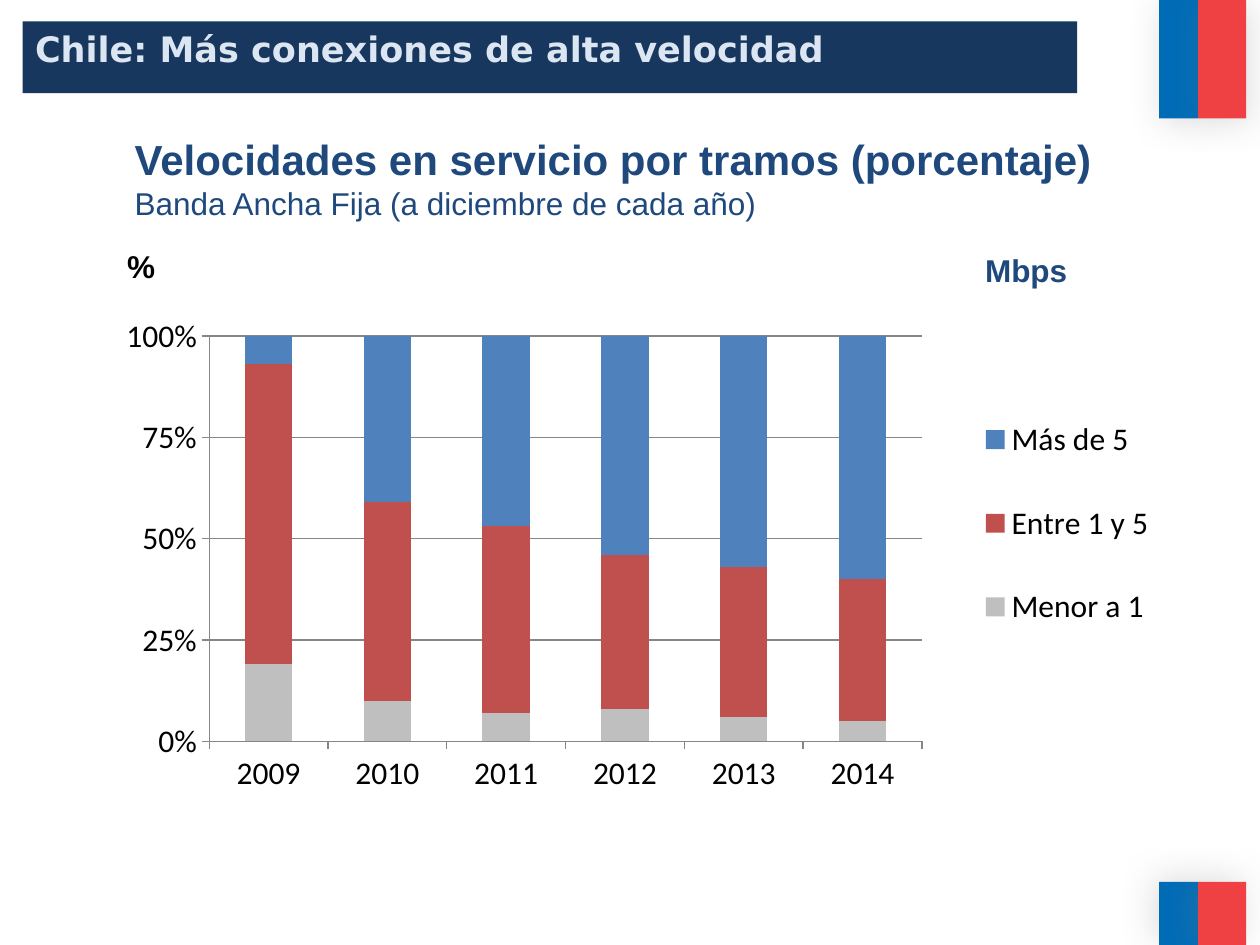
from dataclasses import dataclass

from lxml import etree
from pptx import Presentation
from pptx.chart.chart import Chart
from pptx.chart.data import CategoryChartData
from pptx.dml.color import RGBColor
from pptx.enum.chart import XL_CHART_TYPE, XL_LEGEND_POSITION, XL_TICK_MARK
from pptx.enum.text import MSO_ANCHOR, MSO_AUTO_SIZE, PP_ALIGN
from pptx.oxml import parse_xml
from pptx.oxml.ns import nsdecls, qn
from pptx.shapes.autoshape import Shape
from pptx.slide import Slide
from pptx.text.text import TextFrame
from pptx.util import Inches, Pt
from pptx.enum.shapes import MSO_SHAPE

RECTANGLE = MSO_SHAPE.RECTANGLE
STACKED_100 = XL_CHART_TYPE.COLUMN_STACKED_100
LEGEND_RIGHT = XL_LEGEND_POSITION.RIGHT
TICK_OUTSIDE = XL_TICK_MARK.OUTSIDE
ANCHOR_TOP = MSO_ANCHOR.TOP
GROW = MSO_AUTO_SIZE.SHAPE_TO_FIT_TEXT
ALIGN_LEFT = PP_ALIGN.LEFT

BLACK = RGBColor(0x00, 0x00, 0x00)
FLAG_BLUE = RGBColor(0x00, 0x6C, 0xB7)
FLAG_RED = RGBColor(0xEF, 0x41, 0x44)
NAVY = RGBColor(0x17, 0x37, 0x5E)
PALE_BLUE = RGBColor(0xDC, 0xE6, 0xF2)
HEADING_BLUE = RGBColor(0x1F, 0x49, 0x7D)
LINE_GREY = RGBColor(0x86, 0x86, 0x86)
BAR_GREY = RGBColor(0xBF, 0xBF, 0xBF)
BAR_RED = RGBColor(0xC0, 0x50, 0x4D)
BAR_BLUE = RGBColor(0x4F, 0x81, 0xBD)


@dataclass(frozen=True)
class Area:
    left: float
    top: float
    width: float
    height: float

    def lengths(self) -> list[Inches]:
        return [Inches(n) for n in (self.left, self.top, self.width, self.height)]


@dataclass(frozen=True)
class Block:
    area: Area
    color: RGBColor
    shadow_angle: int


@dataclass(frozen=True)
class Line:
    text: str
    size: int
    color: RGBColor
    bold: bool = True
    font: str = "Arial"


@dataclass(frozen=True)
class Label:
    area: Area
    lines: tuple[Line, ...]


@dataclass(frozen=True)
class SpeedBand:
    name: str
    values: tuple[int, ...]
    color: RGBColor


FLAG_BLOCKS = (
    Block(Area(9.2, -0.01, 0.31, 0.95), FLAG_BLUE, 45),
    Block(Area(9.51, 0, 0.38, 0.94), FLAG_RED, 45),
    Block(Area(9.2, 7, 0.31, 0.5), FLAG_BLUE, 215),
    Block(Area(9.51, 7, 0.38, 0.5), FLAG_RED, 215),
)
BANNER_AREA = Area(0.18, 0.17, 8.37, 0.57)
BANNER_LINE = Line("Chile: Más conexiones de alta velocidad", 20, PALE_BLUE, font="DejaVu Sans")
LABELS = (
    Label(Area(7.72, 1.94, 0.86, 0.4), (Line("Mbps", 18, HEADING_BLUE),)),
    Label(Area(0.97, 1.01, 8.15, 0.81), (
        Line("Velocidades en servicio por tramos (porcentaje)", 24, HEADING_BLUE),
        Line("Banda Ancha Fija (a diciembre de cada año)", 18, HEADING_BLUE, bold=False),
    )),
    Label(Area(0.91, 1.91, 0.39, 0.4), (Line("%", 18, BLACK),)),
)
CHART_AREA = Area(0.78, 2, 9.08, 4.44)
PLOT_LAYOUT = Area(0.097, 0.15, 0.623, 0.725)
LEGEND_LAYOUT = Area(0.74, 0.22, 0.22, 0.53)
YEARS = [str(year) for year in range(2009, 2015)]
SPEED_BANDS = (
    SpeedBand("Menor a 1 ", (19, 10, 7, 8, 6, 5), BAR_GREY),
    SpeedBand("Entre 1 y 5 ", (74, 49, 46, 38, 37, 35), BAR_RED),
    SpeedBand("Más de 5 ", (7, 41, 47, 54, 57, 60), BAR_BLUE),
)


def add_rectangle(page: Slide, area: Area, color: RGBColor) -> Shape:
    box = page.shapes.add_shape(RECTANGLE, *area.lengths())
    box.shadow.inherit = False
    box.fill.solid()
    box.fill.fore_color.rgb = color
    box.line.fill.background()
    return box


def add_flag_block(page: Slide, block: Block) -> None:
    box = add_rectangle(page, block.area, block.color)
    effects = box._element.spPr.find(qn("a:effectLst"))
    effects.append(parse_xml(
        f'<a:outerShdw {nsdecls("a")} blurRad="{Pt(20)}" dist="{Pt(3)}" '
        f'dir="{block.shadow_angle * 60000}" algn="ctr" rotWithShape="0">'
        '<a:srgbClr val="808080"><a:alpha val="25000"/></a:srgbClr></a:outerShdw>'
    ))


def write_lines(frame: TextFrame, lines: tuple[Line, ...]) -> None:
    for index, line in enumerate(lines):
        para = frame.add_paragraph() if index else frame.paragraphs[0]
        para.text = line.text
        para.alignment = ALIGN_LEFT
        para.font.name = line.font
        para.font.size = Pt(line.size)
        para.font.bold = line.bold
        para.font.color.rgb = line.color


def add_banner(page: Slide) -> None:
    banner = add_rectangle(page, BANNER_AREA, NAVY)
    banner.text_frame.vertical_anchor = ANCHOR_TOP
    write_lines(banner.text_frame, (BANNER_LINE,))


def add_label(page: Slide, label: Label) -> None:
    frame = page.shapes.add_textbox(*label.area.lengths()).text_frame
    frame.word_wrap = False
    frame.auto_size = GROW
    write_lines(frame, label.lines)


def make_layout(area: Area, inner: bool) -> etree._Element:
    target = '<c:layoutTarget val="inner"/>' if inner else ""
    return parse_xml(
        f'<c:layout {nsdecls("c")}><c:manualLayout>{target}'
        '<c:xMode val="edge"/><c:yMode val="edge"/>'
        f'<c:x val="{area.left}"/><c:y val="{area.top}"/>'
        f'<c:w val="{area.width}"/><c:h val="{area.height}"/>'
        '</c:manualLayout></c:layout>'
    )


def place_chart_parts(chart: Chart) -> None:
    plot_area = chart._chartSpace.chart.plotArea
    for layout in plot_area.findall(qn("c:layout")):
        plot_area.remove(layout)
    plot_area.insert(0, make_layout(PLOT_LAYOUT, inner=True))
    legend = chart.legend._element
    for layout in legend.findall(qn("c:layout")):
        legend.remove(layout)
    legend.find(qn("c:legendPos")).addnext(make_layout(LEGEND_LAYOUT, inner=False))


def add_speed_chart(page: Slide) -> None:
    data = CategoryChartData()
    data.categories = YEARS
    for band in SPEED_BANDS:
        data.add_series(band.name, band.values)
    chart = page.shapes.add_chart(STACKED_100, *CHART_AREA.lengths(), data).chart
    chart.has_title = False
    chart.font.name = "Calibri"
    chart.font.size = Pt(18)
    chart.font.color.rgb = BLACK

    plot = chart.plots[0]
    plot.gap_width = 150
    plot.overlap = 100
    plot.vary_by_categories = False
    for series, band in zip(plot.series, SPEED_BANDS):
        series.format.fill.solid()
        series.format.fill.fore_color.rgb = band.color

    share_axis = chart.value_axis
    share_axis.minimum_scale = 0
    share_axis.maximum_scale = 1
    share_axis.major_unit = 0.25
    share_axis.has_major_gridlines = True
    share_axis.tick_labels.number_format = "0%"
    share_axis.tick_labels.number_format_is_linked = False
    for axis in (chart.category_axis, share_axis):
        axis.major_tick_mark = TICK_OUTSIDE
    for part in (chart.category_axis, share_axis, share_axis.major_gridlines):
        part.format.line.color.rgb = LINE_GREY
        part.format.line.width = Pt(0.75)

    chart.has_legend = True
    chart.legend.position = LEGEND_RIGHT
    chart.legend.include_in_layout = False
    place_chart_parts(chart)


def main() -> None:
    deck = Presentation()
    deck.slide_width = Inches(10)
    deck.slide_height = Inches(7.5)
    page = deck.slides.add_slide(deck.slide_layouts[6])
    for block in FLAG_BLOCKS:
        add_flag_block(page, block)
    add_speed_chart(page)
    add_banner(page)
    for label in LABELS:
        add_label(page, label)
    deck.save("out.pptx")


if __name__ == "__main__":
    main()
